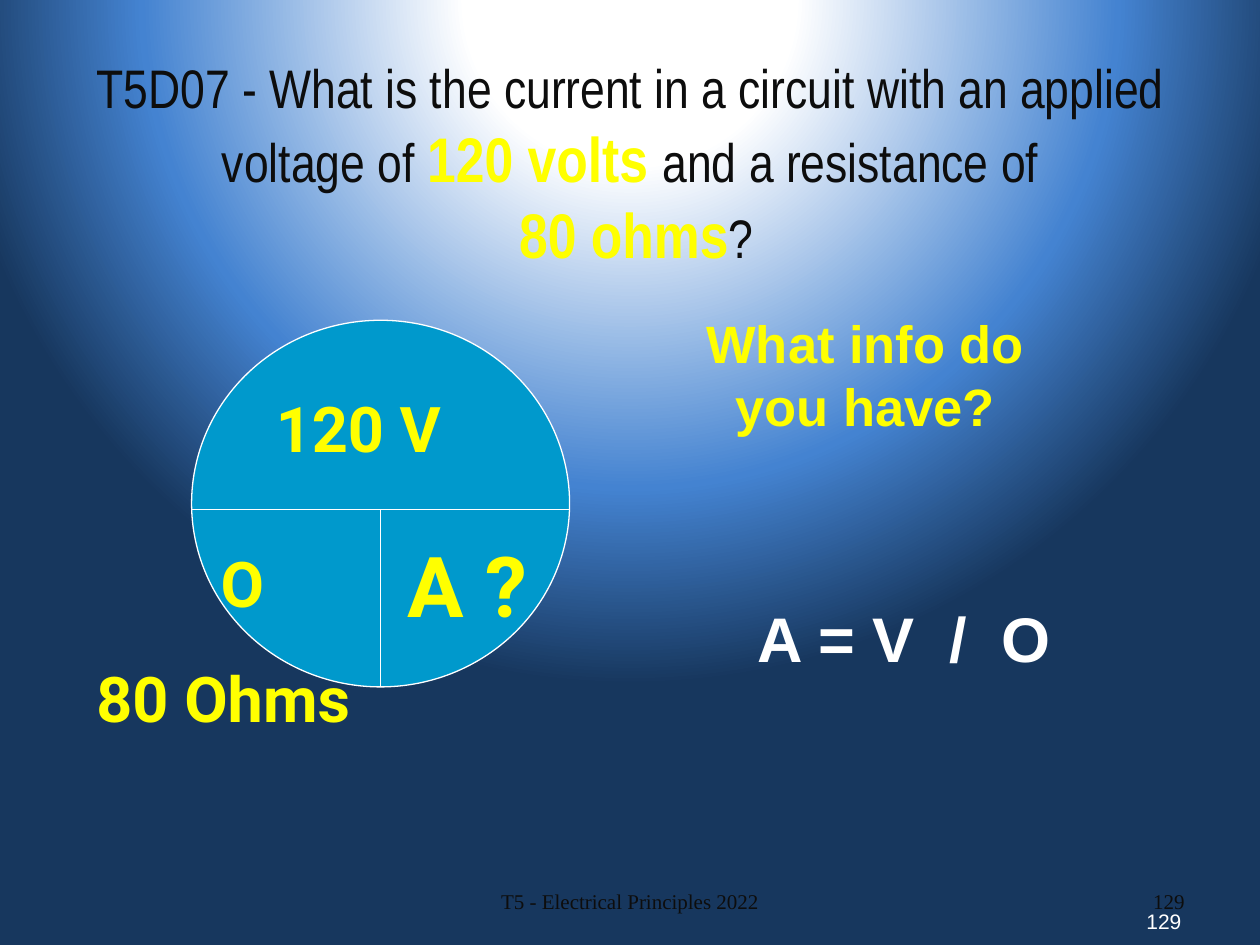
import pptx
import pptx.util
import pptx.dml.color
import pptx.enum.shapes
import pptx.enum.text
import pptx.oxml
import pptx.oxml.ns
import lxml.etree

Pt = pptx.util.Pt
RGB = pptx.dml.color.RGBColor
Align = pptx.enum.text.PP_ALIGN
Anchor = pptx.enum.text.MSO_ANCHOR
Fit = pptx.enum.text.MSO_AUTO_SIZE

WHITE = RGB(0xFF, 0xFF, 0xFF)
YELLOW = RGB(0xFF, 0xFF, 0x00)
INK = RGB(0x0D, 0x0D, 0x0D)
CYAN = RGB(0x00, 0x99, 0xCC)
BLUE = RGB(0x44, 0x83, 0xD1)
NAVY = RGB(0x17, 0x37, 0x5E)

# Content
STOPS = [(21, WHITE), (62, BLUE), (87, NAVY)]
TITLE = [  # paragraphs of (text, key figure?)
    [("T5D07 - What is the current in a circuit with an applied voltage of ", False),
     ("120 volts ", True), ("and a resistance of", False)],
    [(" ", False), ("80 ohms", True), ("?", False)],
]
TITLE_BOX = (24, 24, 672, 138)
WHEEL = (109.5, 183, 216, 209.5)
SPLIT = 291  # height of the wheel's cross line

# Styles: font, size, colour, bold, space before
LABEL = ("Roboto", 36, YELLOW, True, 22.5)
GOAL = ("Roboto", 48, YELLOW, True, 30)
RULE = ("Arial", 36, WHITE, True, 0)
ASK = ("Arial", 30, YELLOW, True, 0)
PAGE = ("Arial", 12, WHITE, False, 0)
FOOT = ("Times New Roman", 12, INK, False, 0)

# Boxes: place, (text, indent) lines, style, align, anchor, wrap, grow
BOXES = [
    ((648, 499.5, 48, 37.5), [("129", 0)], PAGE, Align.LEFT, Anchor.BOTTOM, True, False),
    ((132.5, 219, 170, 50.5), [("120 V", 18)], LABEL, Align.LEFT, Anchor.TOP, True, True),
    ((48, 307.5, 204, 116), [("O", 71), ("80 Ohms", 0)], LABEL,
     Align.LEFT, Anchor.TOP, True, True),
    ((226, 301.5, 99.5, 65), [("A ?", 0)], GOAL, Align.LEFT, Anchor.TOP, True, True),
    ((426, 339, 183, 50.5), [("A = V  /  O", 0)], RULE, Align.LEFT, Anchor.TOP, False, True),
    ((390, 174, 209, 80), [("What info do you have?", 0)], ASK,
     Align.CENTER, Anchor.TOP, True, True),
    ((246, 500.5, 228, 28.5), [("T5 - Electrical Principles 2022", 0)], FOOT,
     Align.CENTER, Anchor.MIDDLE, True, False),
    ((516, 500.5, 168, 28.5), [("129", 0)], FOOT, Align.RIGHT, Anchor.MIDDLE, True, False),
]


def style(font, name, size, color, bold):
    font.name, font.size, font.bold = name, Pt(size), bold
    font.color.rgb = color


def paint(slide):
    """Radial background, centred above the slide."""
    fill = slide.background.fill
    fill.gradient()
    grad = slide.element.find(".//" + pptx.oxml.ns.qn("a:gradFill"))
    stops = "".join(f'<a:gs pos="{pos * 1000}"><a:srgbClr val="{color}"/></a:gs>'
                    for pos, color in STOPS)
    new = pptx.oxml.parse_xml(
        f'<a:gradFill {pptx.oxml.ns.nsdecls("a")} rotWithShape="1"><a:gsLst>{stops}</a:gsLst>'
        '<a:path path="circle"><a:fillToRect l="50000" t="-80000" r="50000" b="180000"/>'
        '</a:path></a:gradFill>')
    grad.getparent().replace(grad, new)


def add_title(slide):
    title = slide.shapes.title
    title.left, title.top, title.width, title.height = map(Pt, TITLE_BOX)
    frame = title.text_frame
    frame.auto_size, frame.vertical_anchor = Fit.NONE, Anchor.MIDDLE
    for i, parts in enumerate(TITLE):
        para = frame.add_paragraph() if i else frame.paragraphs[0]
        para.alignment = Align.CENTER
        for text, key in parts:
            run = para.add_run()
            run.text = text
            style(run.font, "Arial Narrow", 36 if key else 31, YELLOW if key else INK, key)


def add_wheel(slide):
    group = slide.shapes.add_group_shape().shapes
    left, top, width, height = WHEEL
    disc = group.add_shape(pptx.enum.shapes.MSO_SHAPE.OVAL, *map(Pt, WHEEL))
    disc.shadow.inherit = False
    disc.fill.solid()
    disc.fill.fore_color.rgb = CYAN
    mid = left + width / 2
    lines = [disc]
    for ends in [(left, SPLIT, left + width, SPLIT), (mid, top + height, mid, SPLIT)]:
        line = group.add_connector(pptx.enum.shapes.MSO_CONNECTOR.STRAIGHT, *map(Pt, ends))
        lxml.etree.SubElement(line.element.spPr, pptx.oxml.ns.qn("a:effectLst"))
        lines.append(line)
    for shape in lines:
        shape.line.color.rgb, shape.line.width = WHITE, Pt(0.75)
    # The effect list must follow the line properties
    for line in lines[1:]:
        props = line.element.spPr
        props.append(props.find(pptx.oxml.ns.qn("a:effectLst")))


def add_box(slide, place, rows, look, align, anchor, wrap, grow):
    frame = slide.shapes.add_textbox(*map(Pt, place)).text_frame
    frame.word_wrap, frame.vertical_anchor = wrap, anchor
    frame.auto_size = Fit.SHAPE_TO_FIT_TEXT if grow else Fit.NONE
    *face, gap = look
    for i, (text, indent) in enumerate(rows):
        para = frame.add_paragraph() if i else frame.paragraphs[0]
        para.text, para.alignment, para.space_before = text, align, Pt(gap)
        style(para.font, *face)
        if indent:
            para._p.get_or_add_pPr().set("marL", str(Pt(indent)))


def main():
    deck = pptx.Presentation()
    deck.slide_width, deck.slide_height = Pt(720), Pt(540)
    slide = deck.slides.add_slide(deck.slide_layouts[5])
    paint(slide)
    add_title(slide)
    add_wheel(slide)
    for box in BOXES:
        add_box(slide, *box)
    deck.save("out.pptx")


if __name__ == "__main__":
    main()
